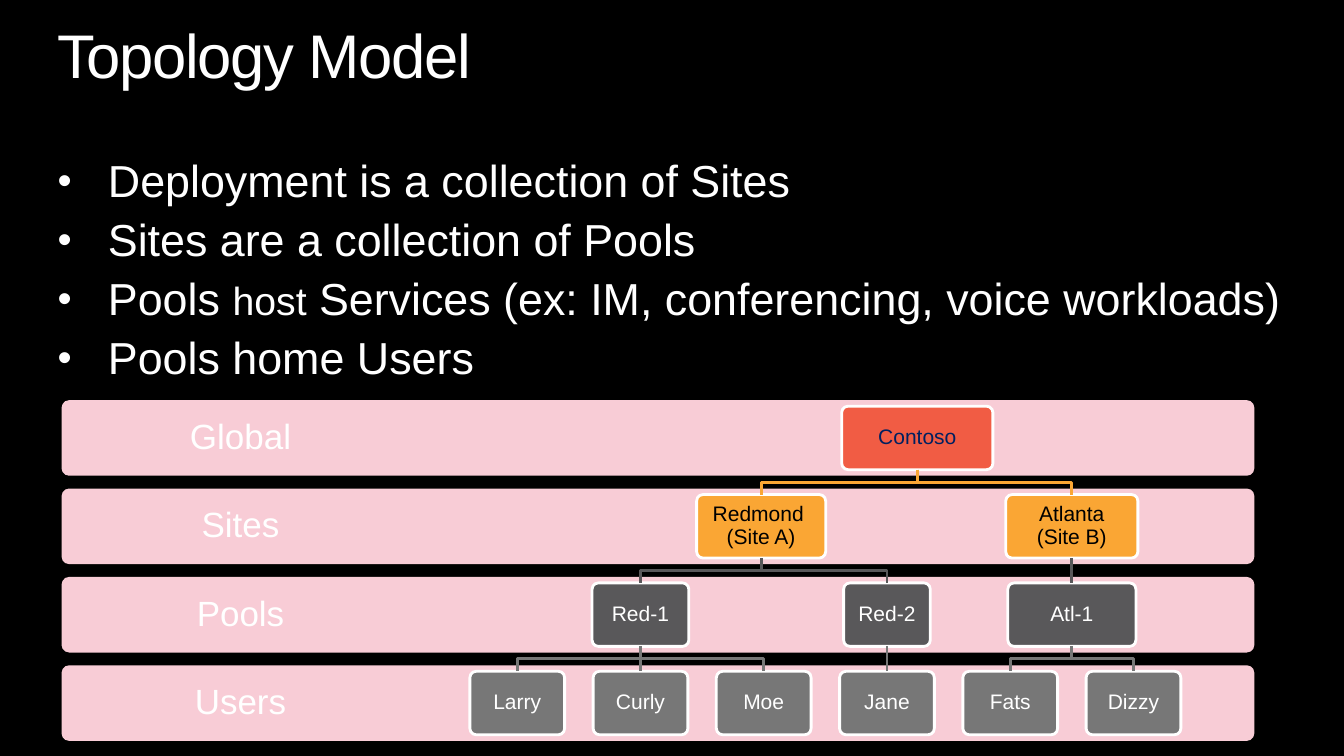
import itertools

import pptx
import pptx.dml.color
import pptx.enum.shapes
import pptx.enum.text
import pptx.oxml.ns
import pptx.util
from lxml import etree

# Grid: 100 columns by 100 rows; every place below is in columns and rows
SLIDE_WIDTH = pptx.util.Inches(13.33)
SLIDE_HEIGHT = pptx.util.Inches(7.5)
MARGIN, TEXT_WIDTH = 4.28, 91.45
BAND_LEFT, BAND_TOP, BAND_WIDTH, BAND_HEIGHT, BAND_PITCH = 4.58, 52.93, 88.75, 10, 11.69
LABEL_WIDTH = 0.3 * BAND_WIDTH
BOX_HEIGHT = 8.4
USER_LEFT, USER_WIDTH, USER_PITCH = 34.96, 7.05, 9.17

LEVELS = ["Global", "Sites", "Pools", "Users"]
LEVEL_FILLS = ["F15C44", "FAA634", "59585A", "777777"]
LEVEL_INKS = ["002060", "000000", "FFFFFF", "FFFFFF"]

BULLETS = [
    [("Deployment is a collection of Sites", 32)],
    [("Sites are a collection of Pools", 32)],
    [("Pools ", 32), ("host", 28), (" Services (ex: IM, conferencing, voice workloads)", 32)],
    [("Pools home Users", 32)],
]


def user(name):
    return name, USER_WIDTH, []


# Each node: name, width in columns, children
TOPOLOGY = ("Contoso", 11.25, [
    ("Redmond \v(Site A)", 9.6, [
        ("Red-1", 7.2, [user("Larry"), user("Curly"), user("Moe")]),
        ("Red-2", 6.45, [user("Jane")]),
    ]),
    ("Atlanta\v(Site B)", 9.83, [
        ("Atl-1", 9.53, [user("Fats"), user("Dizzy")]),
    ]),
])


def colour(hex_string):
    return pptx.dml.color.RGBColor.from_string(hex_string)


def columns(count):
    return round(SLIDE_WIDTH * count / 100)


def rows(count):
    return round(SLIDE_HEIGHT * count / 100)


class TopologySlide:
    font_name = "Arial"
    ink = "FFFFFF"
    outline = "FFFFFF"
    line_width = pptx.util.Pt(2)
    line_spacing = 0.9

    def __init__(self, presentation, background):
        self.slide = presentation.slides.add_slide(presentation.slide_layouts[6])
        self.slide.background.fill.solid()
        self.slide.background.fill.fore_color.rgb = colour(background)
        self.shapes = self.slide.shapes

    def style(self, font, size, ink):
        font.name = self.font_name
        font.size = pptx.util.Pt(size)
        font.color.rgb = colour(ink)

    def frame(self, shape, inset=0.0):
        frame = shape.text_frame
        frame.word_wrap = True
        frame.margin_left = frame.margin_right = pptx.util.Inches(inset)
        frame.margin_top = frame.margin_bottom = pptx.util.Inches(inset)
        return frame

    def area(self, left, top, width, height):
        return self.shapes.add_textbox(columns(left), rows(top), columns(width), rows(height))

    def centred(self, shape, words, size, ink, inset):
        frame = self.frame(shape, inset)
        frame.vertical_anchor = pptx.enum.text.MSO_ANCHOR.MIDDLE
        frame.text = words
        paragraph = frame.paragraphs[0]
        paragraph.alignment = pptx.enum.text.PP_ALIGN.CENTER
        paragraph.line_spacing = self.line_spacing
        for run in paragraph.runs:
            self.style(run.font, size, ink)

    def title(self, words):
        frame = self.frame(self.area(MARGIN, 3.33, TEXT_WIDTH, 9.73))
        frame.text = words
        paragraph = frame.paragraphs[0]
        paragraph.line_spacing = self.line_spacing
        run = paragraph.runs[0]
        self.style(run.font, 44, self.ink)
        run.font._element.set("spc", "-100")

    def bullets(self, items):
        frame = self.frame(self.area(MARGIN, 21.07, TEXT_WIDTH, 30.13))
        for index, item in enumerate(items):
            paragraph = frame.add_paragraph() if index else frame.paragraphs[0]
            properties = paragraph._p.get_or_add_pPr()
            indent = pptx.util.Inches(0.5)
            properties.set("marL", str(indent))
            properties.set("indent", str(-indent))
            for tag, key, value in [("a:buSzPct", "val", "90000"), ("a:buFont", "typeface", "Arial"),
                                    ("a:buChar", "char", "•")]:
                etree.SubElement(properties, pptx.oxml.ns.qn(tag)).set(key, value)
            paragraph.line_spacing = self.line_spacing
            paragraph.space_before = pptx.util.Pt(7.4 if index else 0)
            for words, size in item:
                run = paragraph.add_run()
                run.text = words
                self.style(run.font, size, self.ink)

    def rounded(self, left, top, width, height, fill):
        shape = self.shapes.add_shape(pptx.enum.shapes.MSO_SHAPE.ROUNDED_RECTANGLE,
                                      columns(left), rows(top), columns(width), rows(height))
        shape.adjustments[0] = 0.1
        shape.shadow.inherit = False
        shape.fill.solid()
        shape.fill.fore_color.rgb = colour(fill)
        return shape

    def band(self, level, label):
        top = BAND_TOP + level * BAND_PITCH
        self.rounded(BAND_LEFT, top, BAND_WIDTH, BAND_HEIGHT, "F8CCD6").line.fill.background()
        self.centred(self.area(BAND_LEFT, top, LABEL_WIDTH, BAND_HEIGHT), label, 25, self.ink, 0.19)

    def box(self, level, left, width, name):
        top = BAND_TOP + level * BAND_PITCH + (BAND_HEIGHT - BOX_HEIGHT) / 2
        shape = self.rounded(left, top, width, BOX_HEIGHT, LEVEL_FILLS[level])
        self.stroke(shape, self.outline)
        self.centred(shape, name, 15, LEVEL_INKS[level], 0.08)
        return shape

    def stroke(self, shape, hex_string):
        shape.line.color.rgb = colour(hex_string)
        shape.line.width = self.line_width

    def link(self, parent, child, hex_string):
        start_x, end_x = (shape.left + shape.width // 2 for shape in (parent, child))
        start_y, end_y = parent.top + parent.height, child.top
        if abs(start_x - end_x) < columns(0.1):
            line = self.shapes.add_connector(pptx.enum.shapes.MSO_CONNECTOR.STRAIGHT,
                                             start_x, start_y, end_x, end_y)
            line.begin_connect(parent, 2)
            line.end_connect(child, 0)
            etree.SubElement(line._element.spPr, pptx.oxml.ns.qn("a:effectLst"))
        else:
            middle = (start_y + end_y) // 2
            builder = self.shapes.build_freeform(start_x, start_y)
            builder.add_line_segments([(start_x, middle), (end_x, middle), (end_x, end_y)], close=False)
            line = builder.convert_to_shape()
            line.fill.background()
            line.shadow.inherit = False
        self.stroke(line, hex_string)

    def tree(self, node, user_lefts, level=0):
        """Draw a node centred over the outer edges of its children."""
        name, width, branches = node
        children = [self.tree(branch, user_lefts, level + 1) for branch in branches]
        if children:
            outer_edges = children[0].left + children[-1].left + children[-1].width
            left = outer_edges / 2 / SLIDE_WIDTH * 100 - width / 2
        else:
            left = next(user_lefts)
        shape = self.box(level, left, width, name)
        for child in children:
            self.link(shape, child, LEVEL_FILLS[level + 1])
        return shape


def main():
    presentation = pptx.Presentation()
    presentation.slide_width = SLIDE_WIDTH
    presentation.slide_height = SLIDE_HEIGHT
    topology = TopologySlide(presentation, "000000")

    # Heading and key points
    topology.title("Topology Model")
    topology.bullets(BULLETS)

    # Level bands, then the tree on top of them
    for level, label in enumerate(LEVELS):
        topology.band(level, label)
    topology.tree(TOPOLOGY, itertools.count(USER_LEFT, USER_PITCH))

    presentation.save("out.pptx")


if __name__ == "__main__":
    main()
